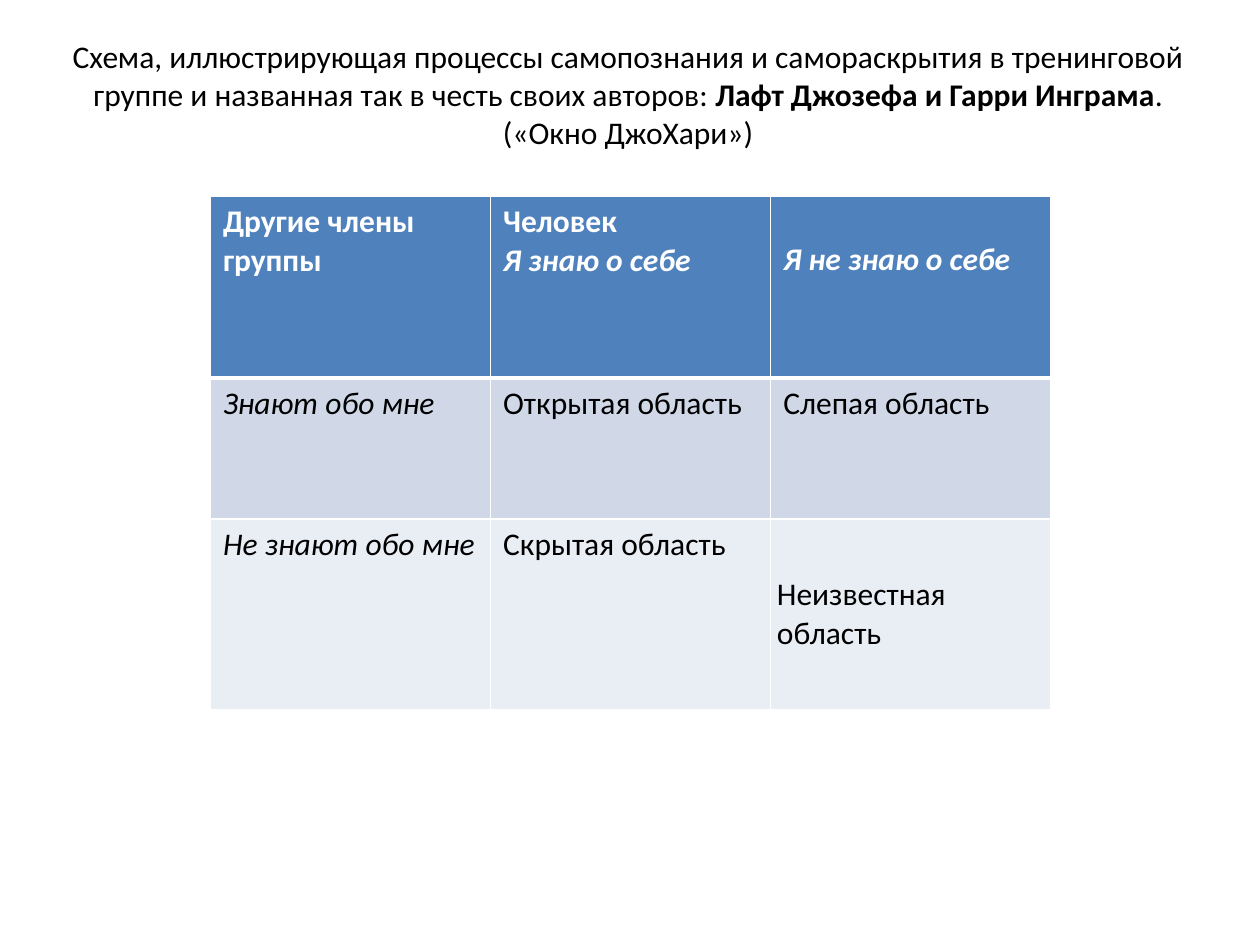
from lxml.etree import SubElement
from pptx import Presentation
from pptx.dml.color import RGBColor
from pptx.enum.text import MSO_ANCHOR, PP_ALIGN
from pptx.oxml.ns import qn
from pptx.util import Inches, Pt

COLORS = {"black": "000000", "white": "FFFFFF", "header": "4F81BD",
          "band_dark": "D0D8E8", "band_light": "E9EDF4"}
TITLE_RUNS = [
    ("Схема, иллюстрирующая процессы самопознания и самораскрытия в тренинговой "
     "группе и названная так в честь своих авторов: ", False),
    ("Лафт Джозефа и Гарри Инграма", True),
    (".(«Окно ДжоХари»)", False),
]
TABLE_ROWS = [
    [[("Другие члены группы", False)],
     [("Человек", False), ("Я знаю о себе", True)],
     [("Я не знаю о себе", True)]],
    [[("Знают обо мне", True)], [("Открытая область", False)], [("Слепая область", False)]],
    [[("Не знают обо мне", True)], [("Скрытая область", False)], [("Неизвестная область", False)]],
]
ROW_HEIGHTS = [1.44, 1.12, 1.51]
ROW_FILLS = ["header", "band_dark", "band_light"]
TABLE_WIDTH = 6.67


def add_run(paragraph, text, color, bold=False, italic=False):
    """Append one formatted run."""
    run = paragraph.add_run()
    run.text = text
    run.font.name, run.font.size = "Calibri", Pt(18)
    run.font.bold, run.font.italic = bold, italic
    run.font.color.rgb = RGBColor.from_string(COLORS[color])


def add_borders(cell, widths):
    """Draw white borders of the given point widths around a cell."""
    properties = cell._tc.get_or_add_tcPr()
    for side, width in widths.items():
        line = SubElement(properties, qn(f"a:ln{side}"), w=str(Pt(width)))
        fill = SubElement(line, qn("a:solidFill"))
        SubElement(fill, qn("a:srgbClr"), val=COLORS["white"])


def add_title(slide):
    """Place and fill the title placeholder."""
    title = slide.shapes.title
    title.left, title.top = Inches(0.47), Inches(0.16)
    title.width, title.height = Inches(9.03), Inches(1.17)
    title.text_frame.vertical_anchor = MSO_ANCHOR.MIDDLE
    paragraph = title.text_frame.paragraphs[0]
    paragraph.alignment = PP_ALIGN.CENTER
    for text, bold in TITLE_RUNS:
        add_run(paragraph, text, "black", bold)


def add_window_table(slide):
    """Build the table of the four areas."""
    table = slide.shapes.add_table(
        len(TABLE_ROWS), len(TABLE_ROWS[0]), Inches(1.67), Inches(1.56),
        Inches(TABLE_WIDTH), Inches(sum(ROW_HEIGHTS))).table
    for row_index, row in enumerate(TABLE_ROWS):
        table.rows[row_index].height = Inches(ROW_HEIGHTS[row_index])
        header = row_index == 0
        for column_index, lines in enumerate(row):
            cell = table.cell(row_index, column_index)
            add_borders(cell, {"L": 1, "R": 1, "T": 3 if row_index == 1 else 1,
                               "B": 3 if header else 1})
            cell.fill.solid()
            cell.fill.fore_color.rgb = RGBColor.from_string(COLORS[ROW_FILLS[row_index]])
            for line_index, (text, italic) in enumerate(lines):
                frame = cell.text_frame
                paragraph = frame.add_paragraph() if line_index else frame.paragraphs[0]
                add_run(paragraph, text, "white" if header else "black", header, italic)
    table.cell(0, 2).margin_top = Inches(0.35)
    unknown_area = table.cell(2, 2)
    unknown_area.vertical_anchor = MSO_ANCHOR.MIDDLE
    unknown_area.margin_left = unknown_area.margin_right = Inches(0.05)
    unknown_area.margin_top = unknown_area.margin_bottom = Inches(0.05)


def main():
    """Build and save the slide."""
    presentation = Presentation()
    presentation.slide_width, presentation.slide_height = Inches(10), Inches(7.5)
    slide = presentation.slides.add_slide(presentation.slide_layouts[5])
    add_title(slide)
    add_window_table(slide)
    presentation.save("out.pptx")


if __name__ == "__main__":
    main()
